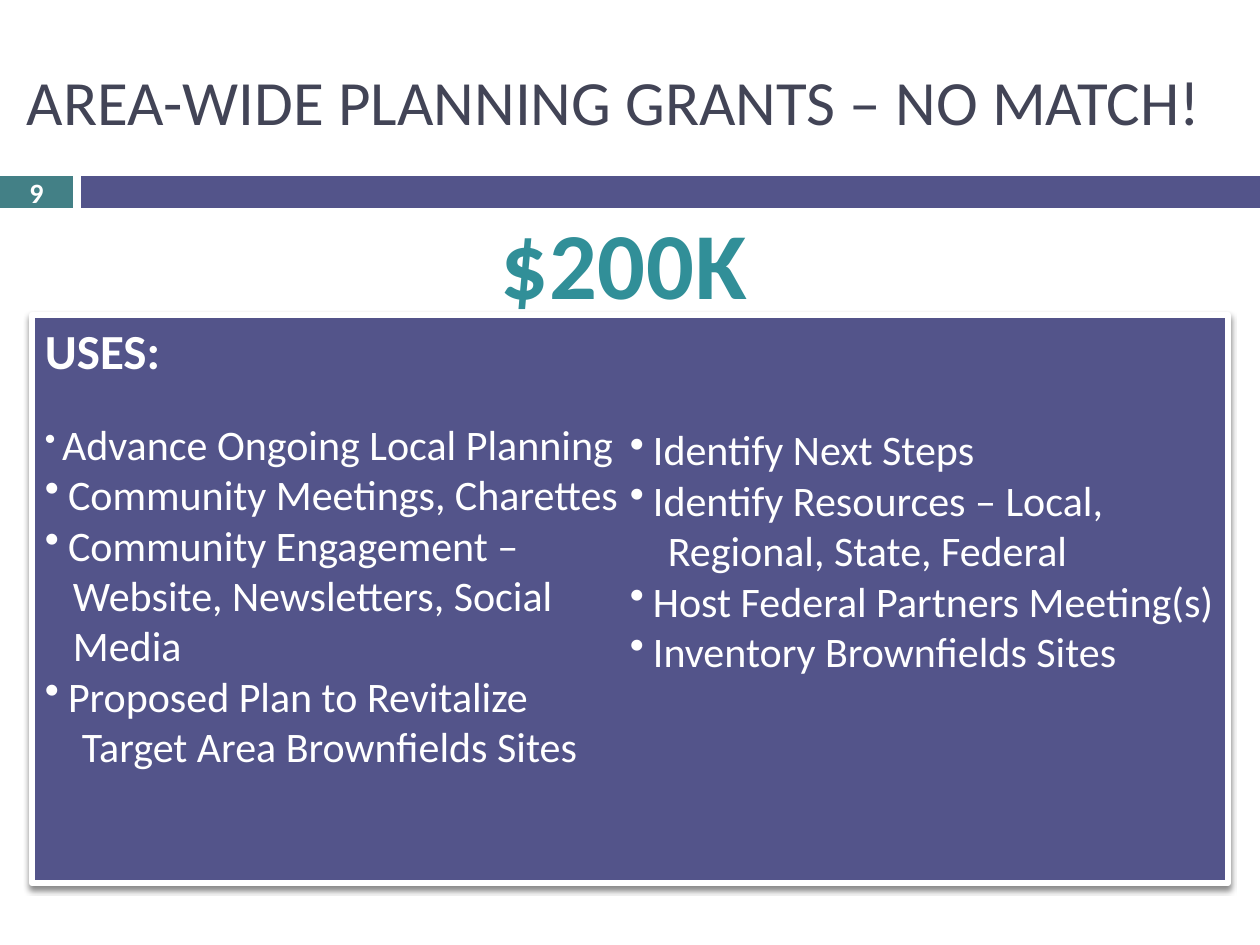
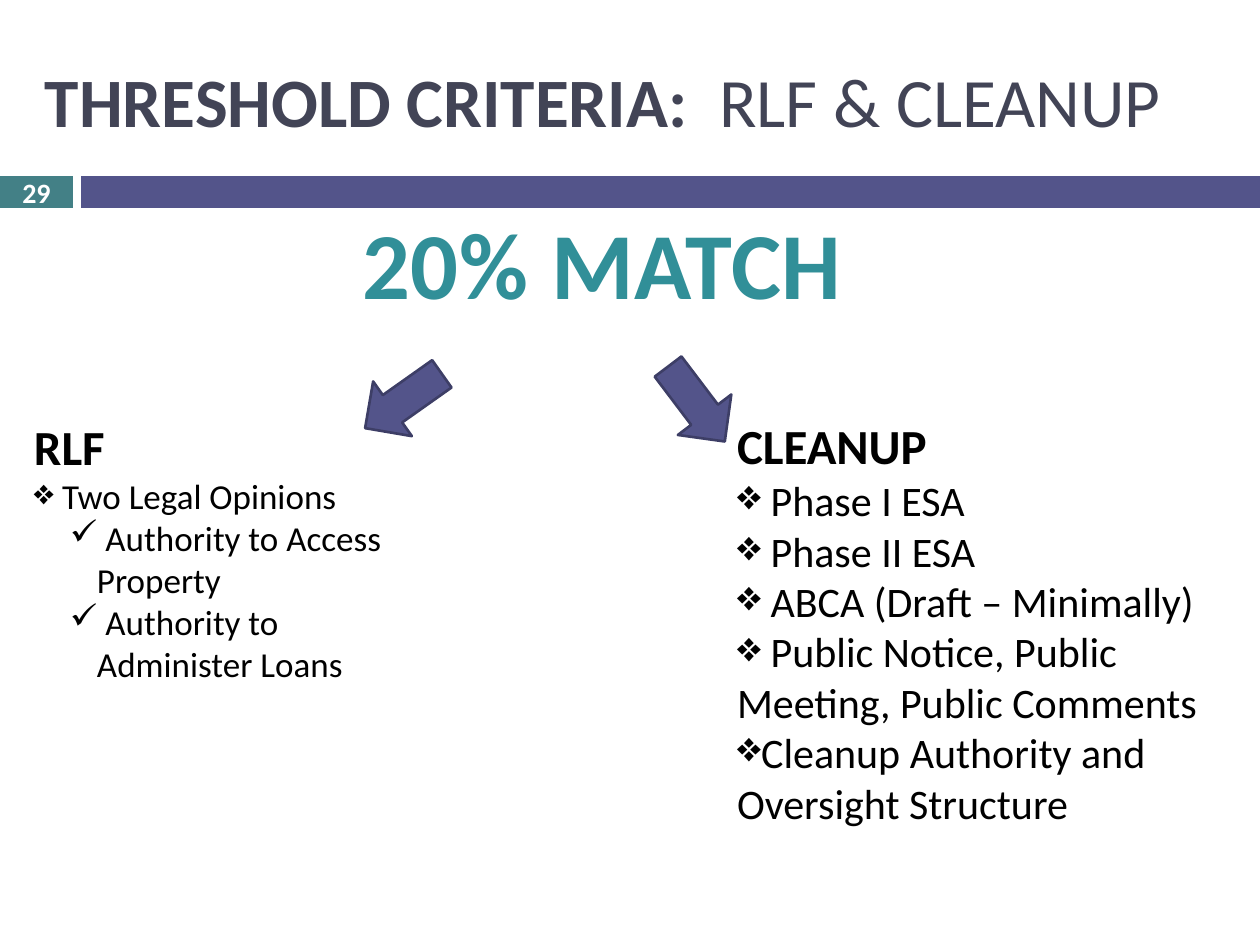
import pptx
import pptx.util
import pptx.dml.color
import pptx.enum.shapes
import pptx.enum.text
import pptx.oxml
import pptx.oxml.ns
import lxml.etree

EMU_PER_PX = 914400 / 126
FONT = "Calibri"
PURPLE, PURPLE_EDGE, GREEN = "53548A", "3D3E66", "438086"
TEAL, TEAL_DARK = "318F98", "20676E"
TITLE_INK, WHITE, BLACK = "424456", "FFFFFF", "000000"
SHAPES = pptx.enum.shapes.MSO_SHAPE
LEFT = pptx.enum.text.PP_ALIGN.LEFT
CENTER = pptx.enum.text.PP_ALIGN.CENTER
MIDDLE = pptx.enum.text.MSO_ANCHOR.MIDDLE
TOP = pptx.enum.text.MSO_ANCHOR.TOP


def px(length):
    return pptx.util.Emu(round(length * EMU_PER_PX))


def color(hex_code):
    return pptx.dml.color.RGBColor.from_string(hex_code)


def add_child(parent, tag, **attributes):
    child = lxml.etree.SubElement(parent, pptx.oxml.ns.qn(tag))
    for name, value in attributes.items():
        child.set(name, str(value))
    return child


def write(frame, text, size=24, ink=BLACK, bold=False, align=LEFT, bullet=None,
          bullet_percent=100, margin=0, indent=0, before=0):
    """Add one paragraph; text is a string or a list of (text, bold) spans."""
    para = frame.paragraphs[0] if not frame.text else frame.add_paragraph()
    para.alignment = align
    properties = para._p.get_or_add_pPr()
    properties.set("marL", str(px(margin)))
    properties.set("indent", str(px(indent)))
    if before:
        para.space_before = pptx.util.Pt(before)
    if bullet:
        add_child(properties, "a:buSzPct", val=bullet_percent * 1000)
        add_child(properties, "a:buChar", char=bullet)
    for words, weight in ([(text, bold)] if isinstance(text, str) else text):
        span = para.add_run()
        span.text = words
        span.font.name = FONT
        span.font.size = pptx.util.Pt(size)
        span.font.bold = weight
        span.font.color.rgb = color(ink)
    return para


def set_frame(frame, inset=(13, 6), anchor=TOP, wrap=True):
    frame.word_wrap = wrap
    frame.vertical_anchor = anchor
    frame.margin_left = frame.margin_right = px(inset[0])
    frame.margin_top = frame.margin_bottom = px(inset[1])
    return frame


def add_text_box(page, box, **layout):
    return set_frame(page.shapes.add_textbox(*map(px, box)).text_frame, **layout)


def add_block(page, kind, box, fill, edge=None, edge_width=1.5, turn=0):
    shape = page.shapes.add_shape(kind, *map(px, box))
    shape.shadow.inherit = False
    shape.rotation = turn
    shape.fill.solid()
    shape.fill.fore_color.rgb = color(fill)
    if edge:
        shape.line.color.rgb = color(edge)
        shape.line.width = pptx.util.Pt(edge_width)
    else:
        shape.line.fill.background()
    return shape


def add_page(deck, number, title, title_box, title_size):
    """Start a page with its title, number tab and band."""
    page = deck.slides.add_slide(deck.slide_layouts[5])
    heading = page.shapes.title
    heading.left, heading.top, heading.width, heading.height = map(px, title_box)
    write(set_frame(heading.text_frame, anchor=MIDDLE), title,
          size=title_size, ink=TITLE_INK)
    top, height, tab_width, band_left = 176, 32, 73, 81
    tab = add_block(page, SHAPES.RECTANGLE, (0, top, tab_width, height), GREEN)
    write(set_frame(tab.text_frame, inset=(0, 0), anchor=MIDDLE), number,
          size=16, ink=WHITE, bold=True, align=CENTER)
    add_block(page, SHAPES.RECTANGLE,
              (band_left, top, 1260 - band_left, height), PURPLE)
    return page


def add_headline(page, box, text):
    """Large headline shaded from teal to dark teal."""
    para = write(add_text_box(page, box, wrap=False), text,
                 size=54, bold=True, align=CENTER)
    span = para.runs[0]
    span.font.fill.gradient()
    span.font.fill.gradient_angle = 270
    shades = [(0.25, TEAL), (1, TEAL_DARK)]
    for stop, (position, shade) in zip(span.font.fill.gradient_stops, shades):
        stop.position = position
        stop.color.rgb = color(shade)
    span._r.get_or_add_rPr().set("spc", "50")


def add_uses_panel(page, box):
    """Framed panel with the uses in two columns."""
    left, top, width, height = box
    panel = add_block(page, SHAPES.RECTANGLE, box, PURPLE, WHITE, 3.75)
    effects = panel._element.spPr.find(pptx.oxml.ns.qn("a:effectLst"))
    shadow = add_child(effects, "a:outerShdw", blurRad=pptx.util.Pt(3),
                       dist=pptx.util.Pt(2.4), dir=90 * 60000, rotWithShape=0)
    add_child(add_child(shadow, "a:srgbClr", val=BLACK), "a:alpha", val=45000)

    pad, half = 13, width // 2
    first = add_text_box(page, (left + pad, top, half - pad, height), inset=(0, 6))
    write(first, "USES:", size=28, ink=WHITE, bold=True)
    write(first, "Advance Ongoing Local Planning", ink=WHITE, bullet="•",
          bullet_percent=75, margin=17, indent=-17, before=22)
    second = add_text_box(page, (left + half, top + 103, half - 6, height - 103),
                          inset=(0, 6))
    # A margin marks a line that continues the bullet above it
    columns = [
        (first, [("Community Meetings, Charettes", 0),
                 ("Community Engagement –", 0),
                 ("Website, Newsletters, Social", 28),
                 ("Media", 28),
                 ("Proposed Plan to Revitalize", 0),
                 ("Target Area Brownfields Sites", 37)]),
        (second, [("Identify Next Steps", 0),
                  ("Identify Resources – Local,", 0),
                  ("Regional, State, Federal", 38),
                  ("Host Federal Partners Meeting(s)", 0),
                  ("Inventory Brownfields Sites", 0)]),
    ]
    for frame, lines in columns:
        for text, margin in lines:
            if margin:
                write(frame, text, ink=WHITE, margin=margin)
            else:
                write(frame, text, ink=WHITE, bullet="•", margin=23, indent=-23)


def add_rlf_list(page, box):
    frame = add_text_box(page, box)
    write(frame, "RLF", size=28, bold=True)
    write(frame, " Two Legal Opinions", size=20, bullet="❖")
    for text in (" Authority to Access Property", " Authority to Administer Loans"):
        write(frame, text, size=20, bullet="✓", margin=63, indent=-27)


def add_cleanup_list(page, box):
    frame = add_text_box(page, box)
    write(frame, "CLEANUP", size=28, bold=True)
    for text in (" Phase I ESA", " Phase II ESA", " ABCA (Draft – Minimally)",
                 " Public Notice, Public Meeting, Public Comments",
                 "Cleanup Authority and Oversight Structure"):
        write(frame, text, bullet="❖")


def build_planning_page(deck):
    page = add_page(deck, "9", "AREA-WIDE PLANNING GRANTS – NO MATCH!",
                    (14, 32, 1246, 136), 36)
    add_headline(page, (486, 199, 276, 127), "$200K")
    add_uses_panel(page, (32, 315, 1196, 568))


def build_threshold_page(deck):
    title = [("THRESHOLD CRITERIA: ", True), (" RLF & CLEANUP", False)]
    page = add_page(deck, "29", title, (32, 32, 1228, 136), 39.6)
    add_headline(page, (346, 199, 512, 127), "20% MATCH")
    # Arrows from the headline to each list
    for left, top, turn in ((370, 354, 54.7), (663, 357, 322.9)):
        add_block(page, SHAPES.DOWN_ARROW, (left, top, 67, 94),
                  PURPLE, PURPLE_EDGE, turn=turn)
    add_rlf_list(page, (21, 410, 410, 323))
    add_cleanup_list(page, (724, 410, 536, 505))


def main():
    deck = pptx.Presentation()
    deck.slide_width, deck.slide_height = px(1260), px(945)
    build_planning_page(deck)
    build_threshold_page(deck)
    deck.save("out.pptx")


if __name__ == "__main__":
    main()
